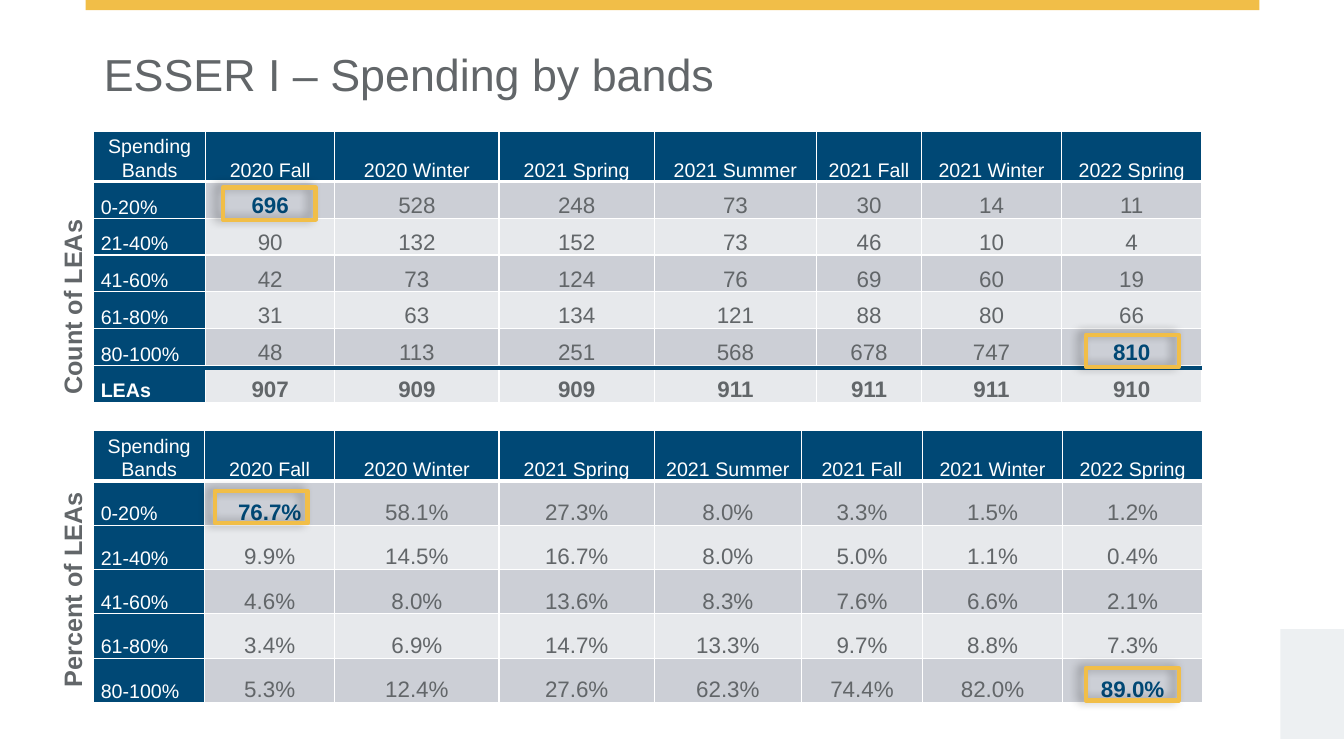
import pptx
import pptx.util
import pptx.dml.color
import pptx.enum.shapes
import pptx.enum.text
import pptx.oxml
import pptx.oxml.ns
from dataclasses import dataclass

Inches = pptx.util.Inches
Pt = pptx.util.Pt
ALIGN = pptx.enum.text.PP_ALIGN
ANCHOR = pptx.enum.text.MSO_ANCHOR
RECTANGLE = pptx.enum.shapes.MSO_SHAPE.RECTANGLE

TITLE = "ESSER I – Spending by bands"
HEADER = ["Spending Bands", "2020 Fall", "2020 Winter", "2021 Spring",
          "2021 Summer", "2021 Fall", "2021 Winter", "2022 Spring"]
COUNTS = [
    ["0-20%", "696", "528", "248", "73", "30", "14", "11"],
    ["21-40%", "90", "132", "152", "73", "46", "10", "4"],
    ["41-60%", "42", "73", "124", "76", "69", "60", "19"],
    ["61-80%", "31", "63", "134", "121", "88", "80", "66"],
    ["80-100%", "48", "113", "251", "568", "678", "747", "810"],
    ["LEAs", "907", "909", "909", "911", "911", "911", "910"],
]
PERCENTS = [
    ["0-20%", "76.7%", "58.1%", "27.3%", "8.0%", "3.3%", "1.5%", "1.2%"],
    ["21-40%", "9.9%", "14.5%", "16.7%", "8.0%", "5.0%", "1.1%", "0.4%"],
    ["41-60%", "4.6%", "8.0%", "13.6%", "8.3%", "7.6%", "6.6%", "2.1%"],
    ["61-80%", "3.4%", "6.9%", "14.7%", "13.3%", "9.7%", "8.8%", "7.3%"],
    ["80-100%", "5.3%", "12.4%", "27.6%", "62.3%", "74.4%", "82.0%", "89.0%"],
]
HIGHLIGHTED = {(1, 1), (5, 7)}
SECTIONS = [
    dict(label="Count of LEAs", label_top=2.1, rows=COUNTS, top=1.3, row_height=0.365,
         widths=[1.11, 1.28, 1.63, 1.54, 1.61, 1.04, 1.39, 1.39],
         frames=[(2.21, 1.86), (10.77, 3.32)]),
    dict(label="Percent of LEAs", label_top=5, rows=PERCENTS, top=4.27, row_height=0.44,
         widths=[1.1, 1.29, 1.63, 1.54, 1.46, 1.2, 1.39, 1.39],
         frames=[(2.13, 4.87), (10.77, 6.63)]),
]
DECORATIONS = [((0.85, 0, 11.64, 0.1), "gold"), ((12.7, 6.24, 0.64, 1.09), "mist")]
LEFT, TABLE_WIDTH, HEADER_HEIGHT, TOTAL_LINE_Y = 0.93, 10.99, 0.5, 3.65


@dataclass(frozen=True)
class Theme:
    font: str = "Arial"
    navy: str = "004875"
    gold: str = "F1BE48"
    mist: str = "EDF0F2"
    grey: str = "626669"
    white: str = "FFFFFF"
    bands: tuple = ("E7E9EC", "CCCFD6")
    title_size: int = 32
    label_size: int = 18
    value_size: int = 16
    header_size: int = 14


THEME = Theme()


def rgb(value):
    return pptx.dml.color.RGBColor.from_string(value)


def write(frame, text, size, color=THEME.grey, bold=False, align=ALIGN.LEFT, spacing=None):
    paragraph = frame.paragraphs[0]
    paragraph.alignment = align
    if spacing:
        paragraph.line_spacing = spacing
    run = paragraph.add_run()
    run.text = text
    run.font.name = THEME.font
    run.font.size = Pt(size)
    run.font.bold = bold
    run.font.color.rgb = rgb(color)


def add_borders(cell, bottom):
    properties = cell._tc.get_or_add_tcPr()
    sides = [("lnL", 1), ("lnR", 1), ("lnT", 1), ("lnB", bottom)]
    for position, (side, width) in enumerate(sides):
        properties.insert(position, pptx.oxml.parse_xml(
            f'<a:{side} {pptx.oxml.ns.nsdecls("a")} w="{Pt(width)}"><a:solidFill>'
            f'<a:srgbClr val="{THEME.white}"/></a:solidFill></a:{side}>'))


def add_table(slide, section):
    rows = [HEADER] + section["rows"]
    heights = [HEADER_HEIGHT] + [section["row_height"]] * len(section["rows"])
    table = slide.shapes.add_table(
        len(rows), len(HEADER), Inches(LEFT), Inches(section["top"]),
        Inches(TABLE_WIDTH), Inches(sum(heights))).table
    for column, width in zip(table.columns, section["widths"]):
        column.width = Inches(width)
    for r, values in enumerate(rows):
        table.rows[r].height = Inches(heights[r])
        for c, value in enumerate(values):
            cell = table.cell(r, c)
            heading = r == 0 or c == 0
            highlighted = (r, c) in HIGHLIGHTED
            cell.margin_left = cell.margin_right = Inches(0.07)
            cell.margin_top = cell.margin_bottom = 0
            cell.vertical_anchor = ANCHOR.BOTTOM
            cell.fill.solid()
            cell.fill.fore_color.rgb = rgb(THEME.navy if heading else THEME.bands[r % 2])
            add_borders(cell, bottom=3 if r == 0 else 1)
            write(cell.text_frame, value,
                  size=THEME.header_size if heading else THEME.value_size,
                  color=THEME.white if heading else THEME.navy if highlighted else THEME.grey,
                  bold=highlighted or values[0] == "LEAs",
                  align=ALIGN.LEFT if c == 0 and r > 0 else ALIGN.CENTER,
                  spacing=1.07)


def add_label(slide, text, top):
    label = slide.shapes.add_textbox(Inches(-1), Inches(top), Inches(3.43), Inches(0.4))
    label.rotation = 270
    label.text_frame.word_wrap = True
    write(label.text_frame, text, size=THEME.label_size, bold=True)


def add_frame(slide, left, top):
    frame = slide.shapes.add_shape(
        RECTANGLE, Inches(left), Inches(top), Inches(0.92), Inches(0.32))
    frame.fill.background()
    frame.line.color.rgb = rgb(THEME.gold)
    frame.line.width = Pt(3)
    frame._element.spPr.append(pptx.oxml.parse_xml(
        f'<a:effectLst {pptx.oxml.ns.nsdecls("a")}>'
        f'<a:outerShdw blurRad="{Pt(7)}" dist="{Pt(4)}" dir="{190 * 60000}" rotWithShape="0">'
        '<a:srgbClr val="000000"><a:alpha val="35000"/></a:srgbClr>'
        '</a:outerShdw></a:effectLst>'))


def add_total_line(slide):
    line = slide.shapes.add_connector(
        pptx.enum.shapes.MSO_CONNECTOR.STRAIGHT, Inches(LEFT), Inches(TOTAL_LINE_Y),
        Inches(LEFT + TABLE_WIDTH), Inches(TOTAL_LINE_Y))
    line.line.color.rgb = rgb(THEME.navy)
    line.line.width = Pt(2.5)
    line._element.spPr.append(
        pptx.oxml.parse_xml(f'<a:effectLst {pptx.oxml.ns.nsdecls("a")}/>'))


def main():
    deck = pptx.Presentation()
    deck.slide_width, deck.slide_height = Inches(13.33), Inches(7.5)
    slide = deck.slides.add_slide(deck.slide_layouts[5])
    for box, color in DECORATIONS:
        decoration = slide.shapes.add_shape(RECTANGLE, *map(Inches, box))
        decoration.shadow.inherit = False
        decoration.fill.solid()
        decoration.fill.fore_color.rgb = rgb(getattr(THEME, color))
        decoration.line.fill.background()
    title = slide.shapes.title
    title.left, title.top, title.width, title.height = map(Inches, (LEFT, 0.41, 9.23, 0.64))
    title.text_frame.vertical_anchor = ANCHOR.TOP
    write(title.text_frame, TITLE, size=THEME.title_size)
    for section in SECTIONS:
        add_table(slide, section)
        add_label(slide, section["label"], section["label_top"])
    add_total_line(slide)
    for section in SECTIONS:
        for left, top in section["frames"]:
            add_frame(slide, left, top)
    deck.save("out.pptx")


if __name__ == "__main__":
    main()
